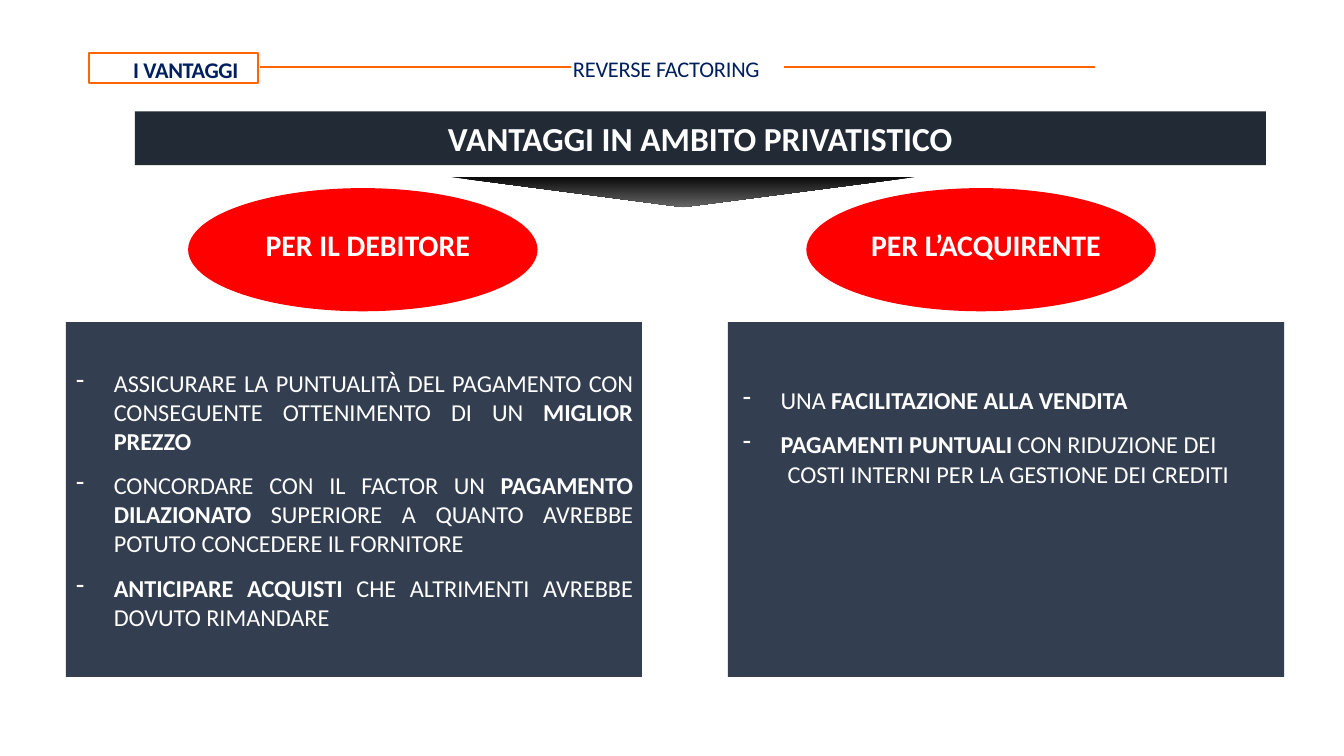
from dataclasses import dataclass

from lxml import etree
from pptx import Presentation
from pptx.dml.color import RGBColor as RGB
from pptx.enum.shapes import MSO_CONNECTOR as CONN, MSO_SHAPE as SHAPE
from pptx.enum.text import MSO_ANCHOR as ANCHOR, MSO_AUTO_SIZE as AUTO, PP_ALIGN as ALIGN
from pptx.oxml.ns import qn
from pptx.util import Pt


@dataclass(frozen=True)
class Theme:
    font: str = "Calibri"
    white: RGB = RGB(0xFF, 0xFF, 0xFF)
    navy: RGB = RGB(0x00, 0x1F, 0x5F)
    orange: RGB = RGB(0xFF, 0x66, 0x00)
    red: RGB = RGB(0xFF, 0x00, 0x00)
    banner: RGB = RGB(0x22, 0x2A, 0x35)
    panel: RGB = RGB(0x33, 0x3F, 0x50)
    dark: RGB = RGB(0x08, 0x08, 0x08)
    grey: RGB = RGB(0x66, 0x66, 0x66)
    title_size: int = 18
    label_size: int = 16
    body_size: int = 13
    header_size: int = 12
    rule: float = 1.19


T = Theme()


def add_box(shapes, kind, box, fill=None, line=None):
    sp = shapes.add_shape(kind, *map(Pt, box))
    sp.shadow.inherit = False
    if fill is None:
        sp.fill.background()
    else:
        sp.fill.solid()
        sp.fill.fore_color.rgb = fill
    if line is None:
        sp.line.fill.background()
    else:
        sp.line.color.rgb = line
        sp.line.width = Pt(T.rule)
    return sp


def set_frame(sp, insets, anchor=ANCHOR.TOP):
    tf = sp.text_frame
    tf.word_wrap = True
    tf.auto_size = AUTO.NONE
    tf.vertical_anchor = anchor
    tf.margin_left, tf.margin_top, tf.margin_right, tf.margin_bottom = map(Pt, insets)
    return tf


def add_run(p, text, size, color, bold=False, spacing=0):
    r = p.add_run()
    r.text = text
    f = r.font
    f.name, f.size, f.bold = T.font, Pt(size), bold
    f.color.rgb = color
    if spacing:
        f._element.set("spc", str(round(spacing * 100)))


def set_indent(p, left, first=0, bullet=None):
    pPr = p._p.get_or_add_pPr()
    pPr.set("marL", str(Pt(left)))
    pPr.set("indent", str(Pt(first)))
    if bullet:
        etree.SubElement(pPr, qn("a:buChar")).set("char", bullet)


def add_rule(s, x1, x2, y):
    c = s.shapes.add_connector(CONN.STRAIGHT, Pt(x1), Pt(y), Pt(x2), Pt(y))
    c.line.color.rgb = T.orange
    c.line.width = Pt(T.rule)
    etree.SubElement(c._element.spPr, qn("a:effectLst"))


def add_arrow(s, box):
    sp = add_box(s.shapes, SHAPE.ISOSCELES_TRIANGLE, box, T.dark)
    sp._element.spPr.find(qn("a:xfrm")).set("flipV", "1")
    sp.fill.gradient()
    sp.fill.gradient_angle = 90
    for stop, color in zip(sp.fill.gradient_stops, (T.dark, T.grey)):
        stop.color.rgb = color


def add_title(s, text, box):
    sp = s.shapes.title
    sp.left, sp.top, sp.width, sp.height = map(Pt, box)
    sp.fill.solid()
    sp.fill.fore_color.rgb = T.banner
    p = set_frame(sp, (7.2, 3.6, 7.2, 3.6)).paragraphs[0]
    p.alignment = ALIGN.CENTER
    add_run(p, text, T.title_size, T.white, bold=True)


def add_header(s):
    add_rule(s, 139.5, 306, 36)
    add_rule(s, 420, 586.5, 36)

    tag = add_box(s.shapes, SHAPE.RECTANGLE, (47.7, 28.5, 90.7, 16), line=T.orange)
    p = set_frame(tag, (0, 1.5, 0, 0)).paragraphs[0]
    p.alignment = ALIGN.CENTER
    p.space_before = Pt(1.4)
    set_indent(p, 13)
    add_run(p, "I VANTAGGI", T.header_size, T.navy, bold=True, spacing=-0.2)

    topic = s.shapes.add_textbox(*map(Pt, (306, 28.8, 120, 29.5)))
    p = set_frame(topic, (0, 0.9, 0, 0)).paragraphs[0]
    p.space_before = Pt(1)
    set_indent(p, 0.9)
    add_run(p, "REVERSE FACTORING", T.header_size, T.navy, spacing=-0.1)


def add_badge(s, x, text):
    """Ellipse with its label, grouped."""
    shapes = s.shapes.add_group_shape().shapes
    add_box(shapes, SHAPE.OVAL, (x, 100.8, 187.2, 66), T.red)
    label = add_box(shapes, SHAPE.RECTANGLE, (x + 34, 111.6, 124.5, 41), T.red)
    p = set_frame(label, (0, 0, 0, 0), ANCHOR.MIDDLE).paragraphs[0]
    p.alignment = ALIGN.CENTER
    p.line_spacing = 0.9
    p.space_after = Pt(5.6)
    add_run(p, text, T.label_size, T.white, bold=True)


def add_panel(s, x, width, items, insets, anchor):
    """Items are (left indent, hanging indent, bullet, space after, [(text, bold)])."""
    sp = add_box(s.shapes, SHAPE.RECTANGLE, (x, 172.6, width, 190), T.panel)
    tf = set_frame(sp, insets, anchor)
    for i, (left, first, bullet, after, runs) in enumerate(items):
        p = tf.add_paragraph() if i else tf.paragraphs[0]
        p.alignment = ALIGN.JUSTIFY
        p.space_after = Pt(after)
        set_indent(p, left, first, bullet)
        for text, bold in runs:
            add_run(p, text, T.body_size, T.white, bold)


def main():
    prs = Presentation()
    prs.slide_width, prs.slide_height = Pt(720), Pt(405)
    s = prs.slides.add_slide(prs.slide_layouts[5])

    # Header and title banner
    add_title(s, "VANTAGGI IN AMBITO PRIVATISTICO", (72.2, 59.7, 606, 28.8))
    add_header(s)
    add_arrow(s, (240, 94.6, 252, 16.4))

    # The two beneficiaries
    add_badge(s, 100.8, "PER IL DEBITORE")
    add_badge(s, 432, "PER L’ACQUIRENTE")

    # Advantages for the buyer's side
    add_panel(s, 390, 298, [
        (28.2, -20.2, "-", 8, [("UNA ", False), ("FACILITAZIONE ALLA VENDITA", True)]),
        (28.2, -20.2, "-", 0, [("PAGAMENTI PUNTUALI ", True),
                               ("CON RIDUZIONE DEI ", False)]),
        (32, 0, None, 8, [("COSTI INTERNI PER LA GESTIONE DEI CREDITI", False)]),
    ], (0, 34, 4.5, 4.5), ANCHOR.TOP)

    # Advantages for the debtor
    debtor = [
        [("ASSICURARE LA PUNTUALITÀ DEL PAGAMENTO CON CONSEGUENTE OTTENIMENTO DI UN ", False),
         ("MIGLIOR PREZZO", True)],
        [("CONCORDARE CON IL FACTOR UN ", False), ("PAGAMENTO DILAZIONATO", True),
         (" SUPERIORE A QUANTO AVREBBE POTUTO CONCEDERE IL FORNITORE ", False)],
        [("ANTICIPARE ACQUISTI ", True), ("CHE ALTRIMENTI AVREBBE DOVUTO RIMANDARE", False)],
    ]
    add_panel(s, 35.3, 308.7, [(25.7, -20.2, "-", 8, runs) for runs in debtor],
              (0, 5, 5, 5), ANCHOR.MIDDLE)

    prs.save("out.pptx")


if __name__ == "__main__":
    main()
